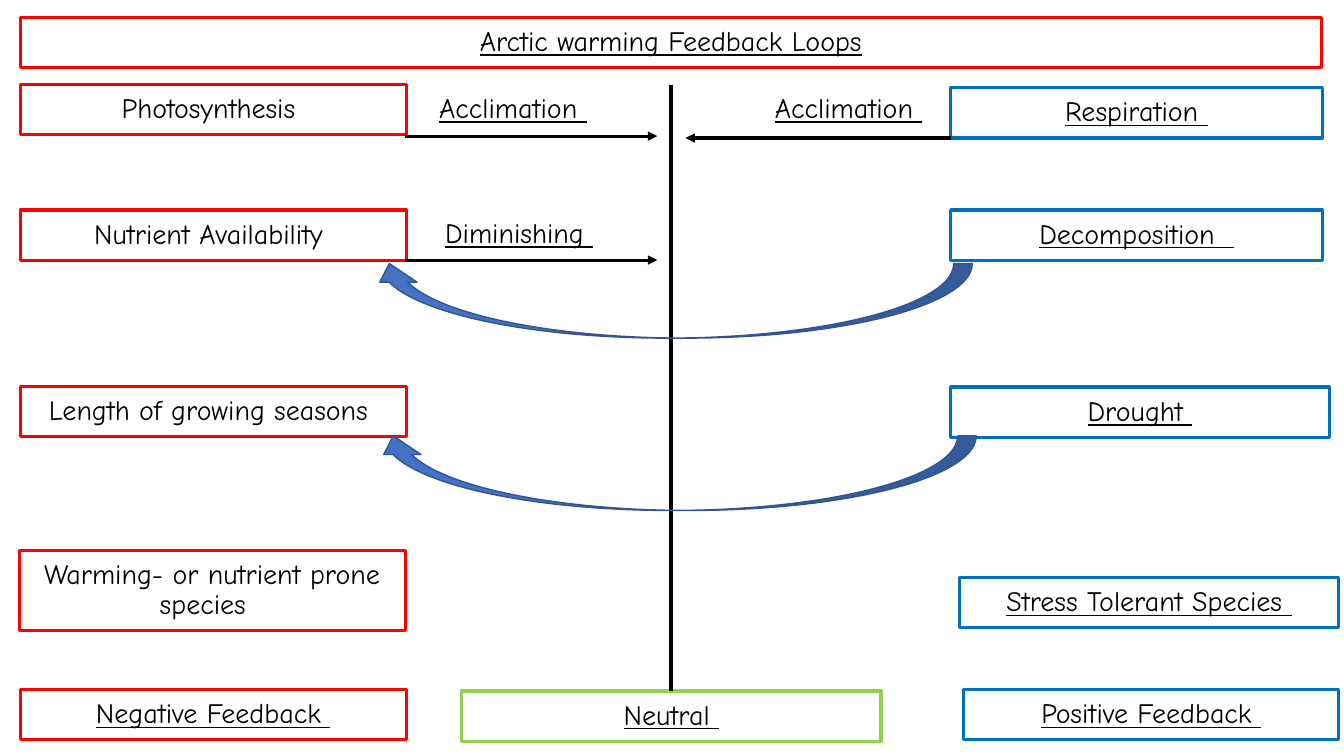
from lxml import etree
from pptx import Presentation
from pptx.dml.color import RGBColor
from pptx.enum.shapes import MSO_CONNECTOR, MSO_SHAPE
from pptx.enum.text import MSO_ANCHOR, PP_ALIGN
from pptx.oxml.ns import qn
from pptx.util import Pt

RECT, CURVED_ARROW = MSO_SHAPE.RECTANGLE, MSO_SHAPE.CURVED_LEFT_ARROW
STRAIGHT = MSO_CONNECTOR.STRAIGHT
CENTER, MIDDLE = PP_ALIGN.CENTER, MSO_ANCHOR.MIDDLE

COLORS = {
    "negative": "FF0000",
    "positive": "0070C0",
    "neutral": "92D050",
    "black": "000000",
    "arrow": "4472C4",
    "arrow_edge": "325491",
}
RGB = {name: RGBColor.from_string(value) for name, value in COLORS.items()}

BOX_H = 36
LEFT_X, LEFT_W = 14.4, 275.8
RIGHT_X = 679
AXIS_X = 479.5

prs = Presentation()
prs.slide_width, prs.slide_height = Pt(960), Pt(540)
s = prs.slides.add_slide(prs.slide_layouts[6])


def write_centered(sp, text, underline):
    tf = sp.text_frame
    tf.word_wrap = True
    tf.vertical_anchor = MIDDLE
    p = tf.paragraphs[0]
    p.text = text
    p.alignment = CENTER
    p.line_spacing = 0.9
    p.font.name = "Comic Neue"
    p.font.size = Pt(20)
    p.font.underline = underline
    p.font.color.rgb = RGB["black"]


def add_line(x1, y1, x2, y2, width, arrow):
    line = s.shapes.add_connector(STRAIGHT, Pt(x1), Pt(y1), Pt(x2), Pt(y2))
    line.line.width = Pt(width)
    line.line.color.rgb = RGB["black"]
    if arrow:
        etree.SubElement(line.line._get_or_add_ln(), qn("a:tailEnd"), type="triangle")
    etree.SubElement(line._element.spPr, qn("a:effectLst"))


# text, left, top, width, height, outline, underlined
boxes = [
    ("Arctic warming Feedback Loops", LEFT_X, 12.3, 929.5, BOX_H, "negative", True),
    ("Photosynthesis ", LEFT_X, 60.4, LEFT_W, BOX_H, "negative", False),
    ("Nutrient Availability ", LEFT_X, 150, LEFT_W, BOX_H, "negative", False),
    ("Length of growing seasons ", LEFT_X, 275.8, LEFT_W, BOX_H, "negative", False),
    ("Warming- or nutrient prone species  ", 13.7, 393.2, LEFT_W, 57, "negative", False),
    ("Negative Feedback ", LEFT_X, 492.5, LEFT_W, BOX_H, "negative", True),
    ("Neutral ", 329.8, 493.6, 299.5, BOX_H, "neutral", True),
    ("Respiration ", RIGHT_X, 62.6, 265.5, BOX_H, "positive", True),
    ("Decomposition  ", RIGHT_X, 150, 265.5, BOX_H, "positive", True),
    ("Drought ", RIGHT_X, 276.5, 270.5, BOX_H, "positive", True),
    ("Stress Tolerant Species ", 685.5, 412.5, 270.5, BOX_H, "positive", True),
    ("Positive Feedback ", 688.3, 492.5, 268, BOX_H, "positive", True),
]
for text, x, y, w, h, outline, underline in boxes:
    sp = s.shapes.add_shape(RECT, Pt(x), Pt(y), Pt(w), Pt(h))
    sp.shadow.inherit = False
    sp.fill.background()
    sp.line.color.rgb = RGB[outline]
    sp.line.width = Pt(2.25)
    write_centered(sp, text, underline)

add_line(AXIS_X, 60.4, AXIS_X, 493.6, 3, False)

for text, x, y in [
    ("Acclimation ", 303.8, 63.4),
    ("Acclimation ", 543.6, 63.4),
    ("Diminishing ", 308.2, 152.6),
]:
    write_centered(s.shapes.add_textbox(Pt(x), Pt(y), Pt(125.3), Pt(29.5)), text, True)

for start, end, y in [(289.5, 469.5, 97.2), (RIGHT_X, 489.6, 98.6), (289.5, 469.5, 185.8)]:
    add_line(start, y, end, y, 2.25, True)

# Quarter-turned arrows sweeping from the right column back to the left one
for x, y in [(455.8, 123.1), (453, 0)]:
    sp = s.shapes.add_shape(CURVED_ARROW, Pt(x), Pt(y), Pt(53.3), Pt(429.8))
    sp.rotation = 90
    sp.shadow.inherit = False
    sp.fill.solid()
    sp.fill.fore_color.rgb = RGB["arrow"]
    sp.line.color.rgb = RGB["arrow_edge"]
    sp.line.width = Pt(1)

prs.save("out.pptx")
